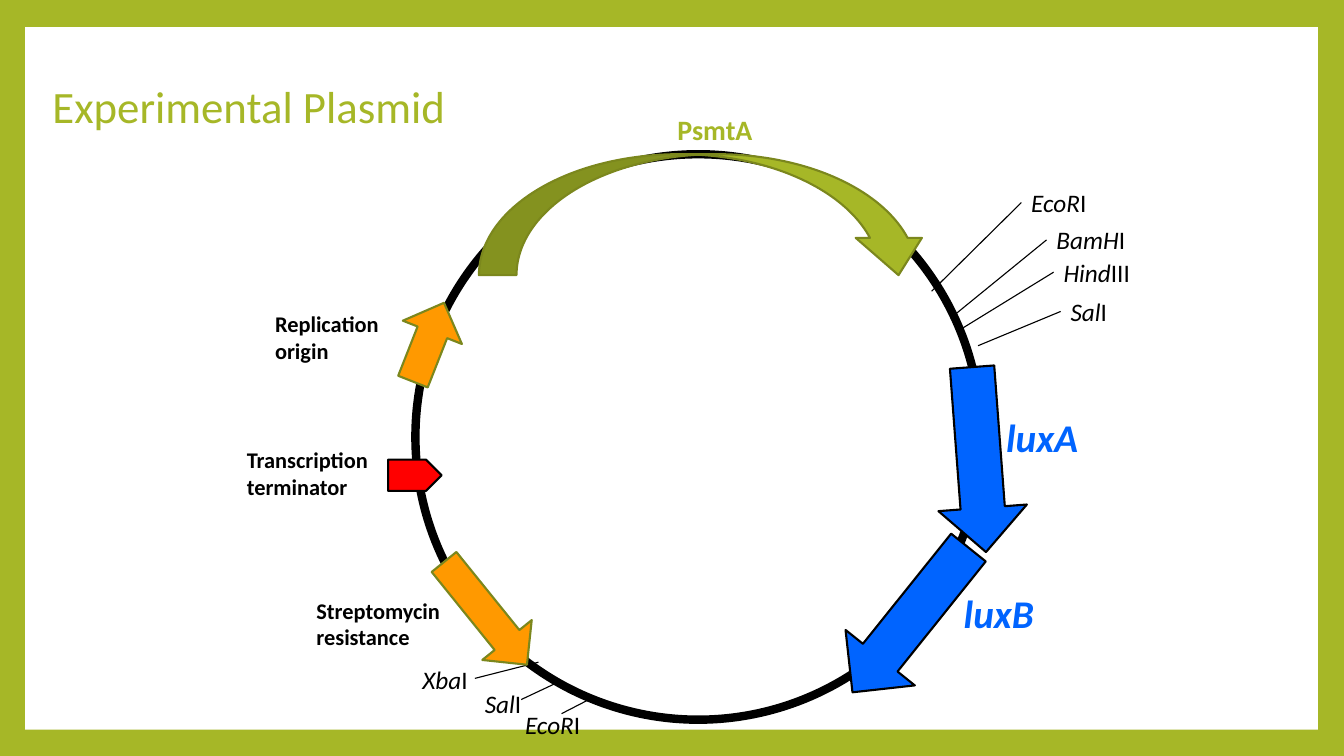
from lxml import etree
from pptx import Presentation
from pptx import util as u
from pptx.dml.color import RGBColor
from pptx.enum import shapes, text
from pptx.oxml.ns import qn

COLORS = {
    "green": "A6B727", "olive": "7B871D", "white": "FFFFFF", "black": "000000",
    "blue": "0064FF", "orange": "FF9900", "red": "FF0000",
}
FONT = "Calibri"
TITLE = "Experimental Plasmid"
RING = (4.12, 1.53, 5.61, 5.61)
SITE_SIZE = (1.66, 0.4)

RIGHT_SITES = [
    ("EcoR", "I", (10.13, 1.81), (9.24, 2.89)),
    ("BamH", "I", (10.38, 2.18), (9.46, 3.13)),
    ("Hind", "III", (10.45, 2.5), (9.54, 3.26)),
    ("Sal", "I", (10.52, 2.89), (9.7, 3.43)),
]
LEFT_SITES = [
    ("Sal", "I", (4.71, 6.78, 0.8, 0.4), (5.51, 6.78), (5.17, 6.94)),
    ("Xba", "I", (4.09, 6.54, 0.8, 0.4), (5.34, 6.57), (4.71, 6.73)),
    ("EcoR", "I", (5.11, 6.99, 1.66, 0.4), (5.9, 6.91), (5.57, 7.08)),
]
LEFT_SITES = [
    (name, numeral, place, start, end) if name == "Xba" else
    (name, numeral, place, (place_line[0][0], place_line[0][1]), place_line[1])
    for name, numeral, place, start, end in LEFT_SITES
    for place_line in [((start[0], start[1]), end)]
]
GENES = [
    ("CURVED_DOWN_ARROW", (4.75, 1.53, 4.49, 1.2), 0, "green", "olive"),
    ("RIGHT_ARROW", (8.79, 4.12, 1.84, 0.88), 85.7, "blue", "black"),
    ("RIGHT_ARROW", (8.11, 5.71, 1.84, 0.88), 128.7, "blue", "black"),
    ("RIGHT_ARROW", (3.83, 3.08, 0.84, 0.63), 291.5, "orange", "olive"),
    ("RIGHT_ARROW", (4.16, 5.77, 1.31, 0.63), 51.1, "orange", "olive"),
    ("PENTAGON", (3.85, 4.56, 0.53, 0.31), 0, "red", "black"),
]
PROMOTER_BENDS = (0.311, 0.547, 0.308)
LABELS = [
    ("PsmtA", (6.62, 1.07, 1.45, 0.44), 20, "green", False),
    ("luxA", (9.88, 4.05, 3.4, 0.57), 28, "blue", True),
    ("luxB", (9.46, 5.8, 3.4, 0.57), 28, "blue", True),
    ("Replication origin", (2.63, 3.03, 1.75, 0.64), 16, "black", False),
    ("Streptomycin resistance", (3.04, 5.87, 1.75, 0.64), 16, "black", False),
    ("Transcription terminator", (2.35, 4.38, 1.75, 0.64), 16, "black", False),
]


def color(name):
    return RGBColor.from_string(COLORS[name])


def inches(values):
    return [u.Inches(value) for value in values]


def add_span(para, words, size=18, tint="black", bold=False, italic=False):
    span = para.add_run()
    span.text = words
    span.font.name = FONT
    span.font.size = u.Pt(size)
    span.font.color.rgb = color(tint)
    span.font.bold = bold
    span.font.italic = italic


def add_label(page, place):
    box = page.shapes.add_textbox(*inches(place))
    box.text_frame.word_wrap = True
    box.text_frame.auto_size = text.MSO_AUTO_SIZE.SHAPE_TO_FIT_TEXT
    return box


def add_site(page, name, numeral, place):
    box = add_label(page, place)
    para = box.text_frame.paragraphs[0]
    add_span(para, name, italic=True)
    add_span(para, numeral)
    return box


def add_pointer(page, start, end):
    line = page.shapes.add_connector(
        shapes.MSO_CONNECTOR.STRAIGHT, *inches(start + end))
    line.line.color.rgb = color("black")
    line.line.width = u.Pt(0.79)
    etree.SubElement(line._element.spPr, qn("a:effectLst"))
    return line


def add_figure(page, kind, place, fill=None, outline=None, width=1.5, turn=0):
    figure = page.shapes.add_shape(
        getattr(shapes.MSO_SHAPE, kind), *inches(place))
    figure.shadow.inherit = False
    figure.rotation = turn
    if fill:
        figure.fill.solid()
        figure.fill.fore_color.rgb = color(fill)
    else:
        figure.fill.background()
    if outline:
        figure.line.color.rgb = color(outline)
        figure.line.width = u.Pt(width)
    else:
        figure.line.fill.background()
    return figure


def main():
    deck = Presentation()
    deck.slide_width, deck.slide_height = inches((13.33, 7.5))
    page = deck.slides.add_slide(deck.slide_layouts[5])
    page.background.fill.solid()
    page.background.fill.fore_color.rgb = color("green")

    panel = add_figure(page, "RECTANGLE", (0.25, 0.27, 12.82, 6.97), "white")
    page.shapes._spTree.insert(2, panel._element)

    title = page.shapes.title
    title.left, title.top, title.width, title.height = inches(
        (0.42, 0.34, 10.8, 1.48))
    title.text_frame.vertical_anchor = text.MSO_ANCHOR.MIDDLE
    para = title.text_frame.paragraphs[0]
    para.alignment = text.PP_ALIGN.LEFT
    para.line_spacing = 0.9
    add_span(para, TITLE, size=32, tint="green")

    add_figure(page, "OVAL", RING, outline="black", width=6)

    for name, numeral, corner, end in RIGHT_SITES:
        box = add_site(page, name, numeral, corner + SITE_SIZE)
        start = (corner[0], corner[1] + SITE_SIZE[1] / 2)
        add_pointer(page, start, end).begin_connect(box, 1)
    for name, numeral, place, start, end in LEFT_SITES:
        add_site(page, name, numeral, place)
        add_pointer(page, start, end)

    for kind, place, turn, fill, outline in GENES:
        gene = add_figure(page, kind, place, fill, outline, turn=turn)
        if kind == "CURVED_DOWN_ARROW":
            for index, bend in enumerate(PROMOTER_BENDS):
                gene.adjustments[index] = bend

    for words, place, size, tint, italic in LABELS:
        para = add_label(page, place).text_frame.paragraphs[0]
        add_span(para, words, size=size, tint=tint, bold=True, italic=italic)

    deck.save("out.pptx")


if __name__ == "__main__":
    main()
